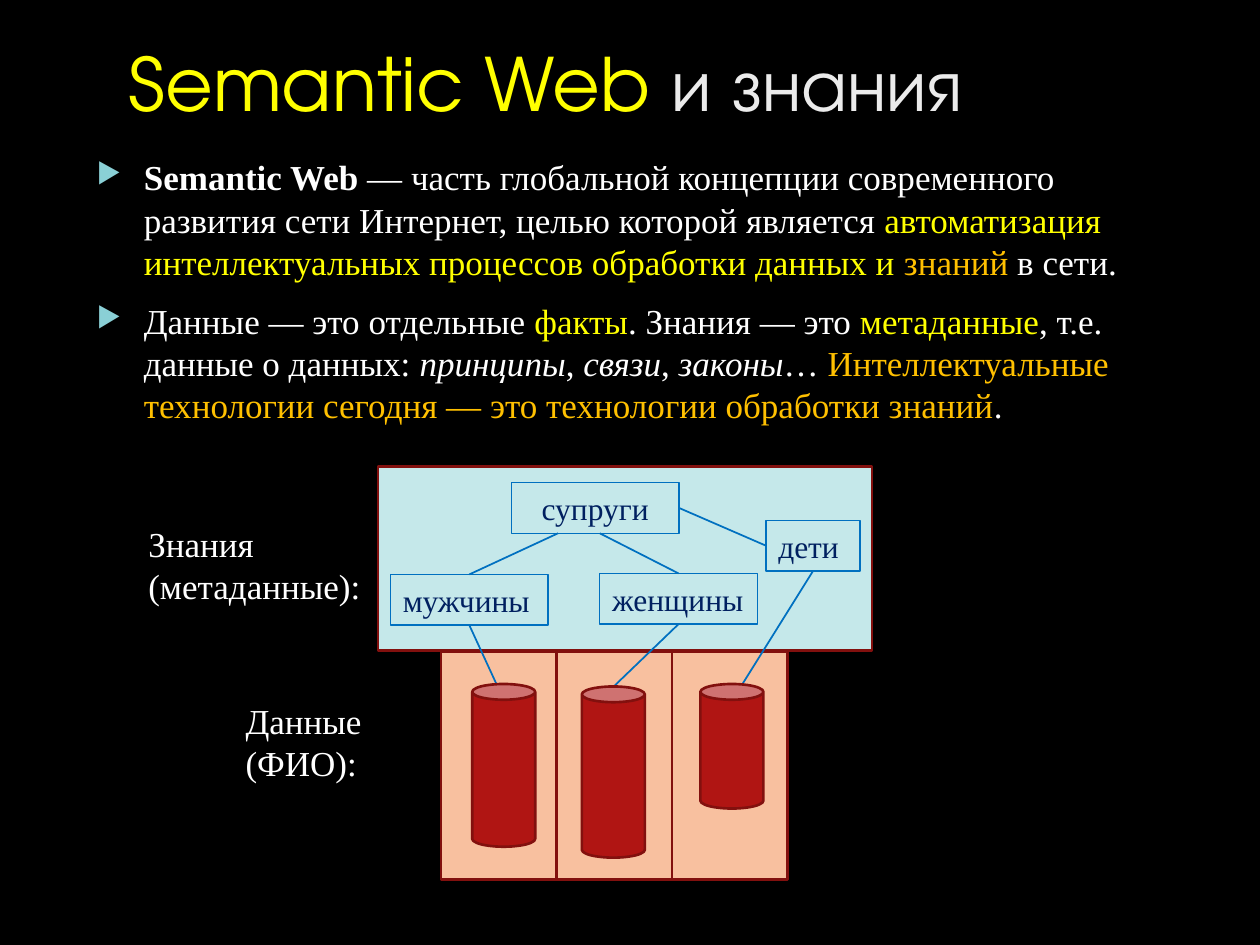
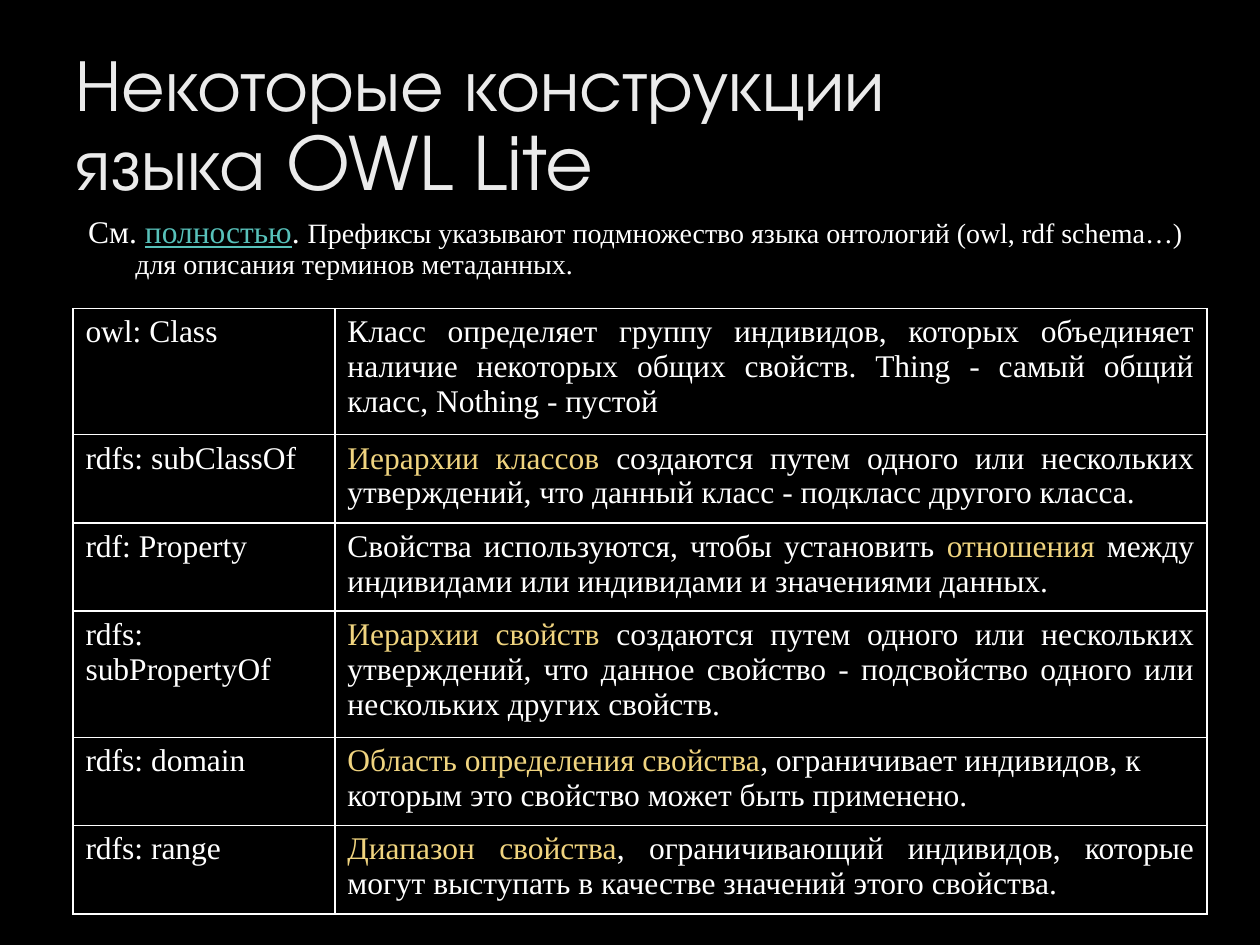
from lxml.etree import SubElement
from pptx import Presentation
from pptx.dml.color import RGBColor
from pptx.enum.shapes import MSO_CONNECTOR as Connector, MSO_SHAPE as Shape
from pptx.enum.text import MSO_ANCHOR as Anchor, MSO_AUTO_SIZE as AutoSize, PP_ALIGN as Align
from pptx.oxml.ns import qn
from pptx.util import Cm, Pt

BLACK = RGBColor(0x00, 0x00, 0x00)
WHITE = RGBColor(0xFF, 0xFF, 0xFF)
LIGHT_GRAY = RGBColor(0xEB, 0xEB, 0xEB)
YELLOW = RGBColor(0xFF, 0xFF, 0x00)
ORANGE = RGBColor(0xFF, 0xC0, 0x00)
SAND = RGBColor(0xF0, 0xD4, 0x7F)
TEAL = RGBColor(0x58, 0xC1, 0xBA)
BULLET = RGBColor(0x8A, 0xD0, 0xD6)
NAVY = RGBColor(0x00, 0x20, 0x60)
BLUE = RGBColor(0x00, 0x70, 0xC0)
RED = RGBColor(0xB0, 0x15, 0x13)
DARK_RED = RGBColor(0x82, 0x10, 0x0E)
PEACH = RGBColor(0xF8, 0xC0, 0x9F)
PALE_BLUE = RGBColor(0xC5, 0xE8, 0xEA)

TITLE_FONT = "TeX Gyre Adventor"
BODY_FONT = "Times New Roman"
TOP, LEFT, BOTTOM, RIGHT = range(4)


def colored(color, text):
    return text, {"color": color}


def italic(text):
    return text, {"italic": True}


def write(paragraph, runs, size=18, color=WHITE, font=BODY_FONT, align=Align.LEFT,
          line_spacing=None, space_before=0, hanging=0, bullet=None):
    paragraph.alignment = align
    paragraph.space_before = Pt(space_before)
    if line_spacing:
        paragraph.line_spacing = line_spacing
    properties = paragraph._p.get_or_add_pPr()
    if hanging:
        properties.set("marL", str(Cm(hanging)))
        properties.set("indent", str(-Cm(hanging)))
    if bullet:
        bullet_color = SubElement(properties, qn("a:buClr"))
        SubElement(bullet_color, qn("a:srgbClr"), val=str(BULLET))
        SubElement(properties, qn("a:buSzPct"), val="80000")
        SubElement(properties, qn("a:buChar"), char=bullet)
    for item in [runs] if isinstance(runs, str) else runs:
        text, style = (item, {}) if isinstance(item, str) else item
        run = paragraph.add_run()
        run.text = text
        run.font.name = font
        run.font.size = Pt(style.get("size", size))
        run.font.color.rgb = style.get("color", color)
        run.font.bold = style.get("bold", False)
        run.font.italic = style.get("italic", False)
        run.font.underline = style.get("underline", False)


class Deck:
    def __init__(self):
        self.presentation = Presentation()
        self.presentation.slide_width = Cm(25.4)
        self.presentation.slide_height = Cm(19.05)
        background = self.presentation.slide_master.background.fill
        background.solid()
        background.fore_color.rgb = BLACK
        self.slide = None

    def start(self, title, left, top, width, height, **text_format):
        layout = self.presentation.slide_layouts.get_by_name("Title Only")
        self.slide = self.presentation.slides.add_slide(layout)
        shape = self.slide.shapes.title
        shape.left, shape.top, shape.width, shape.height = map(Cm, (left, top, width, height))
        frame = shape.text_frame
        frame.auto_size = AutoSize.NONE
        frame.vertical_anchor = Anchor.TOP
        write(frame.paragraphs[0], title, size=42, color=LIGHT_GRAY, font=TITLE_FONT, **text_format)

    def text(self, paragraphs, left, top, width, height, inset=0.25, **text_format):
        box = self.slide.shapes.add_textbox(*map(Cm, (left, top, width, height)))
        frame = box.text_frame
        frame.word_wrap = True
        frame.margin_left = frame.margin_right = Cm(inset)
        for index, runs in enumerate(paragraphs):
            paragraph = frame.add_paragraph() if index else frame.paragraphs[0]
            write(paragraph, runs, **text_format)

    def shape(self, kind, left, top, width, height, fill=None, line=DARK_RED, weight=1.5):
        shape = self.slide.shapes.add_shape(kind, *map(Cm, (left, top, width, height)))
        shape.shadow.inherit = False
        if fill:
            shape.fill.solid()
            shape.fill.fore_color.rgb = fill
        else:
            shape.fill.background()
        shape.line.color.rgb = line
        shape.line.width = Pt(weight)
        return shape

    def concept(self, name, left, top, width, align=Align.LEFT):
        shape = self.shape(Shape.RECTANGLE, left, top, width, 1.02, line=BLUE, weight=0.75)
        frame = shape.text_frame
        frame.word_wrap = True
        frame.vertical_anchor = Anchor.TOP
        write(frame.paragraphs[0], name, color=NAVY, align=align)
        return shape

    def link(self, start, end, begin_joint=None, end_joint=None):
        connector = self.slide.shapes.add_connector(Connector.STRAIGHT, *map(Cm, start + end))
        connector.line.color.rgb = BLUE
        connector.line.width = Pt(1)
        SubElement(connector._element.spPr, qn("a:effectLst"))
        if begin_joint:
            connector.begin_connect(*begin_joint)
        if end_joint:
            connector.end_connect(*end_joint)

    def table(self, rows, left, top, widths, heights):
        frame = self.slide.shapes.add_table(
            len(rows), len(widths), Cm(left), Cm(top), Cm(sum(widths)), Cm(sum(heights)))
        table = frame.table
        table.first_row = table.horz_banding = False
        for column, width in zip(table.columns, widths):
            column.width = Cm(width)
        for row, height, (term, meaning, align) in zip(table.rows, heights, rows):
            row.height = Cm(height)
            for cell, runs, cell_align in zip(row.cells, (term, meaning), (Align.LEFT, align)):
                self.border(cell)
                cell.fill.background()
                write(cell.text_frame.paragraphs[0], runs, align=cell_align)

    def border(self, cell):
        properties = cell._tc.get_or_add_tcPr()
        for side in ("lnL", "lnR", "lnT", "lnB"):
            line = SubElement(properties, qn(f"a:{side}"), w=str(Pt(1)))
            fill = SubElement(line, qn("a:solidFill"))
            SubElement(fill, qn("a:srgbClr"), val=str(WHITE))


def build_knowledge(deck):
    deck.start([colored(YELLOW, "Semantic Web "), "и знания"], 2.34, 0.64, 19.61, 3.89)
    deck.text([
        [("Semantic Web ", {"bold": True}),
         "— часть глобальной концепции современного развития сети Интернет, целью которой является ",
         colored(YELLOW, "автоматизация интеллектуальных процессов обработки данных и "),
         colored(ORANGE, "знаний "), "в сети."],
        ["Данные — это отдельные ", colored(YELLOW, "факты"), ". Знания — это",
         colored(YELLOW, " метаданные"), ", т.е. данные о данных: ",
         italic("принципы"), ", ", italic("связи"), ", ", italic("законы"), "… ",
         colored(ORANGE, "Интеллектуальные технологии сегодня — это технологии обработки знаний"),
         "."],
    ], 1.7, 3.02, 22.22, 5.82, size=20, space_before=10, hanging=0.95, bullet="▶")

    store_left, store_width = 8.89, 2.33
    deck.shape(Shape.RECTANGLE, store_left, 13.13, 3 * store_width, 4.6, PEACH)
    deck.shape(Shape.RECTANGLE, store_left + store_width, 13.13, store_width, 4.6, PEACH)
    deck.shape(Shape.RECTANGLE, 7.62, 9.4, 9.96, 3.71, PALE_BLUE)

    men = deck.concept("мужчины", 7.87, 11.58, 3.18)
    women = deck.concept("женщины", 12.09, 11.56, 3.18)
    children = deck.concept("дети", 15.44, 10.49, 1.9)
    spouses = deck.concept("супруги", 10.31, 9.73, 3.38, align=Align.CENTER)

    deck.link((9.46, 12.6), (10.16, 14.12), (men, BOTTOM))
    deck.link((13.68, 12.58), (12.37, 13.84), (women, BOTTOM))
    deck.link((16.39, 11.51), (14.76, 14.12), (children, BOTTOM))
    deck.link((11.25, 10.75), (9.46, 11.58), end_joint=(men, TOP))
    deck.link((12.09, 10.75), (13.68, 11.56), end_joint=(women, TOP))
    deck.link((15.44, 11), (13.69, 10.24), (children, LEFT), (spouses, RIGHT))

    deck.text(["Знания (метаданные):"], 2.74, 10.41, 4.88, 1.96, size=20)
    deck.text(["Данные (ФИО):"], 4.7, 13.97, 3.1, 1.96, size=20)
    for left, top, height in ((9.52, 13.79, 3.28), (11.73, 13.84, 3.45), (14.12, 13.79, 2.51)):
        deck.shape(Shape.CAN, left, top, 1.27, height, RED)


def build_constructs(deck):
    deck.start("Некоторые конструкции языка OWL Lite", 1.27, 0.84, 19.89, 3.18, line_spacing=0.9)
    deck.text([
        ["См. ", ("полностью", {"color": TEAL, "underline": True}), ". ",
         ("Префиксы указывают подмножество языка онтологий (owl, rdf schema…) "
          "для описания терминов метаданных.", {"size": 16})],
    ], 1.27, 4.24, 23.5, 1.27, inset=0.51, line_spacing=0.9, hanging=0.95)

    tall, short = 2.54, 1.78
    deck.table([
        ("owl: Class",
         "Класс определяет группу индивидов, которых объединяет наличие некоторых общих свойств. "
         "Thing - самый общий класс, Nothing - пустой", Align.JUSTIFY),
        ("rdfs: subClassOf",
         [colored(SAND, "Иерархии классов "),
          "создаются путем одного или нескольких утверждений, "
          "что данный класс - подкласс другого класса."], Align.JUSTIFY),
        ("rdf: Property",
         ["Свойства используются, чтобы установить ", colored(SAND, "отношения"),
          " между индивидами или индивидами и значениями данных."], Align.JUSTIFY),
        ("rdfs: subPropertyOf",
         [colored(SAND, "Иерархии свойств "),
          "создаются путем одного или нескольких утверждений, "
          "что данное свойство - подсвойство одного или нескольких других свойств."],
         Align.JUSTIFY),
        ("rdfs: domain",
         [colored(SAND, "Область определения свойства"),
          ", ограничивает индивидов, к которым это свойство может быть применено."], Align.LEFT),
        ("rdfs: range",
         [colored(SAND, "Диапазон свойства"),
          ", ограничивающий индивидов, которые могут выступать "
          "в качестве значений этого свойства."], Align.JUSTIFY),
    ], 1.47, 6.22, (5.28, 17.58), (tall, short, short, tall, short, short))


def main():
    deck = Deck()
    build_knowledge(deck)
    build_constructs(deck)
    deck.presentation.save("out.pptx")


if __name__ == "__main__":
    main()
